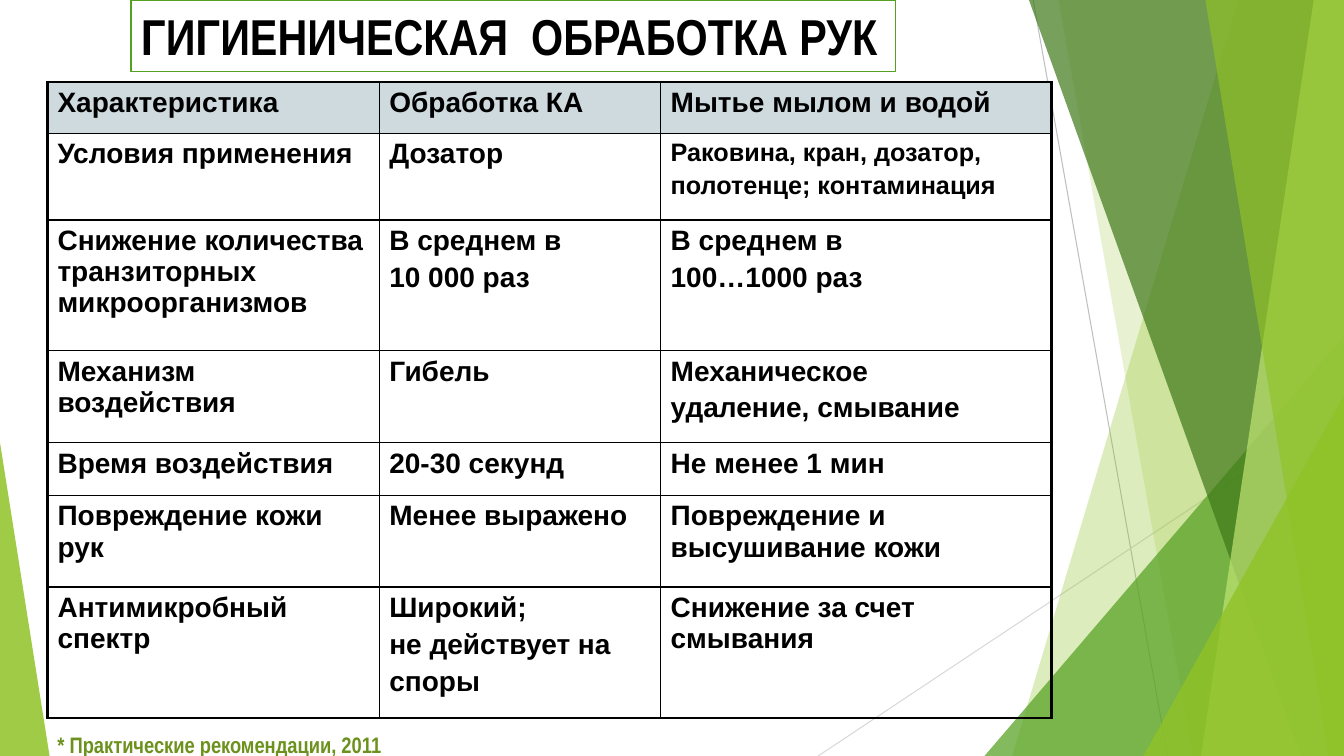
from lxml import etree
from pptx import Presentation
from pptx import util as u
from pptx.dml.color import RGBColor
from pptx.enum import shapes, text
from pptx.oxml import ns

COLUMNS, ROWS = 160, 90
CELL = u.Inches(7.5) / ROWS
THIN, THICK = 1, 2.25


def grid(cells):
    """Turn a number of grid cells into a length."""
    return u.Emu(round(cells * CELL))


def color(hex_code):
    return RGBColor.from_string(hex_code)


def write(frame, words, font="Arial", size=20, ink="000000", gap=0.2):
    """Write one bold paragraph per line; gap is a share of the text size."""
    frame.word_wrap = True
    for index, line in enumerate(words.split("\n")):
        paragraph = frame.paragraphs[0] if index == 0 else frame.add_paragraph()
        paragraph.alignment = text.PP_ALIGN.LEFT
        if index:
            paragraph.space_before = u.Pt(size * gap)
        run = paragraph.add_run()
        run.text = line
        run.font.name, run.font.size, run.font.bold = font, u.Pt(size), True
        run.font.color.rgb = color(ink)


class HygieneSlide:
    heading_font = "Arial Narrow"
    green, deep_green, border = "90C226", "54A021", "000000"
    header_fill = "CFDADF"

    def __init__(self, deck):
        self.slide = deck.slides.add_slide(deck.slide_layouts[6])
        self.shapes = self.slide.shapes

    def ray(self, x1, y1, x2, y2, ink):
        line = self.shapes.add_connector(
            shapes.MSO_CONNECTOR.STRAIGHT, *map(grid, (x1, y1, x2, y2)))
        line.line.color.rgb = color(ink)
        line.line.width = u.Pt(0.75)
        etree.SubElement(line._element.spPr, ns.qn("a:effectLst"))

    def tint(self, shape, fill, opacity):
        shape.shadow.inherit = False
        shape.fill.solid()
        shape.fill.fore_color.rgb = color(fill)
        shape.line.fill.background()
        tone = shape._element.spPr.find(ns.qn("a:solidFill"))[0]
        etree.SubElement(tone, ns.qn("a:alpha"), val=str(opacity * 1000))

    def band(self, top_x, bottom_x, fill, opacity):
        """Fill from a slanted edge to the right side of the slide."""
        outline = self.shapes.build_freeform(grid(top_x), 0)
        corners = [(COLUMNS, 0), (COLUMNS, ROWS), (bottom_x, ROWS)]
        outline.add_line_segments([(grid(x), grid(y)) for x, y in corners])
        self.tint(outline.convert_to_shape(), fill, opacity)

    def corner(self, left, top, width, apex, fill, opacity):
        """Draw a triangle that stands on the bottom of the slide."""
        triangle = self.shapes.add_shape(
            shapes.MSO_SHAPE.ISOSCELES_TRIANGLE,
            *map(grid, (left, top, width, ROWS - top)))
        triangle.adjustments[0] = apex
        self.tint(triangle, fill, opacity)

    def edge_cell(self, cell, widths):
        properties = cell._tc.get_or_add_tcPr()
        for side, width in zip("LRTB", widths):
            edge = etree.SubElement(properties, ns.qn(f"a:ln{side}"),
                                    w=str(u.Pt(width)))
            paint = etree.SubElement(edge, ns.qn("a:solidFill"))
            etree.SubElement(paint, ns.qn("a:srgbClr"), val=self.border)

    def table(self, left, top, widths, heights, content, small):
        """Draw the table; small maps a (row, column) to its text size."""
        frame = self.shapes.add_table(
            len(heights), len(widths),
            *map(grid, (left, top, sum(widths), sum(heights))))
        table = frame.table
        table.first_row = table.horz_banding = False
        for column, width in zip(table.columns, widths):
            column.width = grid(width)
        last_row, last_column = len(heights) - 1, len(widths) - 1
        for r, (height, line) in enumerate(zip(heights, content)):
            table.rows[r].height = grid(height)
            for c, words in enumerate(line):
                cell = table.cell(r, c)
                outer = (c == 0, c == last_column, r == 0, r == last_row)
                self.edge_cell(cell, [THICK if o else THIN for o in outer])
                if r == 0:
                    cell.fill.solid()
                    cell.fill.fore_color.rgb = color(self.header_fill)
                else:
                    cell.fill.background()
                write(cell.text_frame, words, size=small.get((r, c), 20))

    def title(self, left, top, width, height, words):
        box = self.shapes.add_shape(shapes.MSO_SHAPE.RECTANGLE,
                                    *map(grid, (left, top, width, height)))
        box.shadow.inherit = False
        box.fill.solid()
        box.fill.fore_color.rgb = color("FFFFFF")
        box.line.color.rgb = color(self.deep_green)
        box.line.width = u.Pt(1)
        box.text_frame.vertical_anchor = text.MSO_ANCHOR.TOP
        write(box.text_frame, words, font=self.heading_font, size=36)

    def footnote(self, left, top, width, height, words):
        note = self.shapes.add_textbox(*map(grid, (left, top, width, height)))
        write(note.text_frame, words, font=self.heading_font, size=16,
              ink="6C921D")


def main():
    deck = Presentation()
    deck.slide_width, deck.slide_height = grid(COLUMNS), grid(ROWS)
    page = HygieneSlide(deck)

    page.ray(123, 0, 139, ROWS, "BFBFBF")
    page.ray(COLUMNS, 48.4, 97.4, ROWS, "D9D9D9")
    page.band(147.4, 120.5, page.green, 30)
    page.band(126, 142, page.green, 20)
    page.corner(117.2, 40, 42.8, 1, page.deep_green, 72)
    page.band(122.5, 154.9, "3F7819", 70)
    page.band(156.4, 143, "C0E474", 70)
    page.band(143.5, 158.2, page.green, 65)
    page.corner(136.1, 47.1, 23.9, 1, page.green, 80)
    page.corner(0, 52.7, 5.9, 0, page.green, 85)

    comparison = [
        ("Характеристика", "Обработка КА", "Мытье мылом и водой"),
        ("Условия применения", "Дозатор",
         "Раковина, кран, дозатор,\nполотенце; контаминация"),
        ("Снижение количества транзиторных микроорганизмов",
         "В среднем в\n10 000 раз", "В среднем в\n100…1000 раз"),
        ("Механизм воздействия", "Гибель",
         "Механическое\nудаление, смывание"),
        ("Время воздействия", "20-30 секунд", "Не менее 1 мин"),
        ("Повреждение кожи рук", "Менее выражено",
         "Повреждение и высушивание кожи"),
        ("Антимикробный спектр", "Широкий;\nне действует на\nспоры",
         "Снижение за счет смывания"),
    ]
    page.table(5.65, 9.75, widths=[39.5, 33.5, 46.5],
               heights=[6.1, 10.35, 15.55, 10.95, 6.3, 10.9, 15.6],
               content=comparison, small={(1, 2): 18})
    page.footnote(5.65, 86.4, 45.7, 4.4, "* Практические рекомендации, 2011")
    page.title(15.6, 0, 91, 8.5, "ГИГИЕНИЧЕСКАЯ  ОБРАБОТКА РУК")
    deck.save("out.pptx")


if __name__ == "__main__":
    main()
